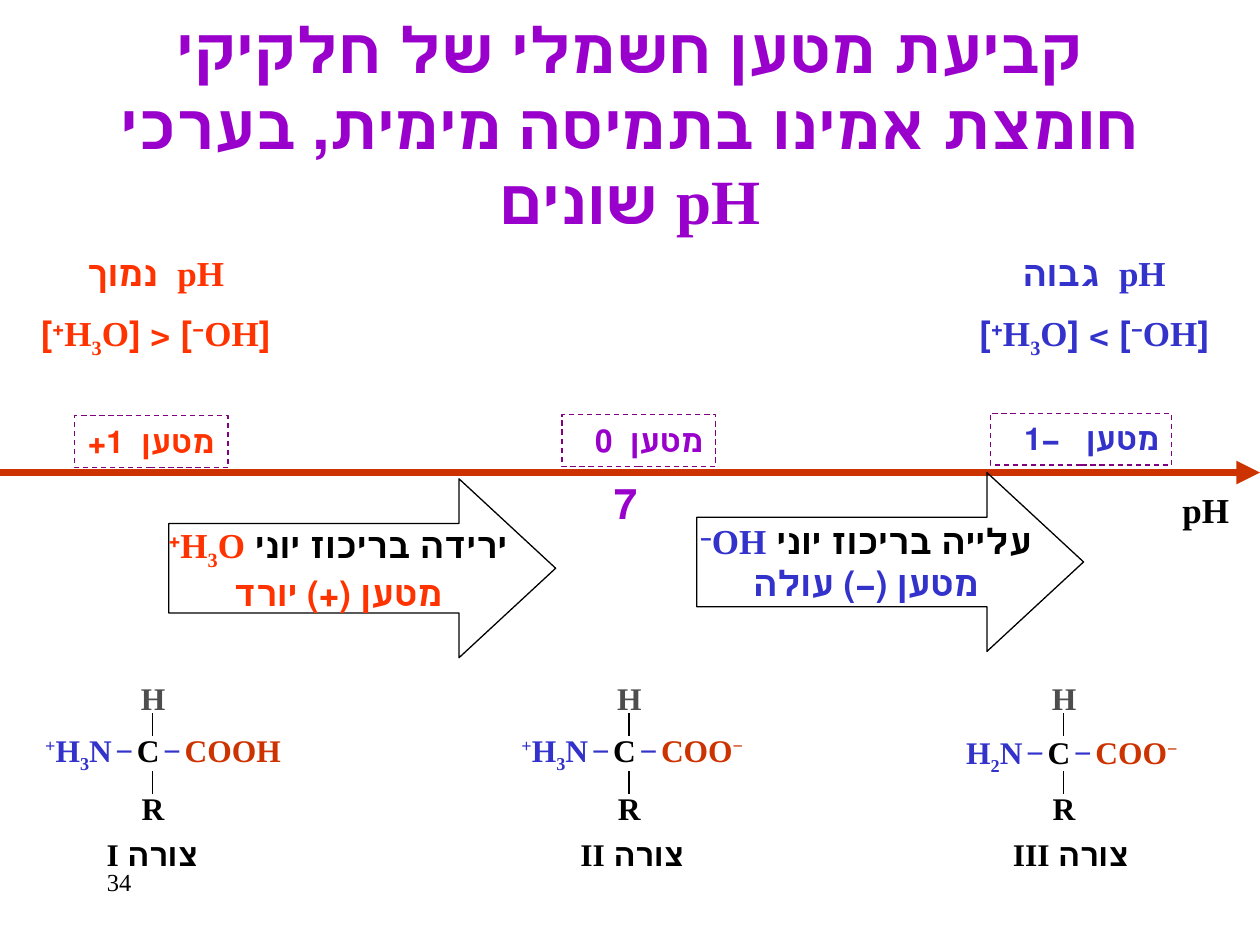
import collections
import pptx
import pptx.dml.color
import pptx.enum.dml
import pptx.enum.shapes
import pptx.enum.text
import pptx.oxml
import pptx.oxml.ns
import pptx.util
import lxml.etree

# The page is a grid of 100 columns by 75 rows of square cells.
COLUMNS, ROWS = 100, 75
CELL = pptx.util.Inches(0.1)
FONT = "Times New Roman"
COLORS = {
    "purple": "9900CC", "blue": "3333CC", "red": "FF3300", "rust": "CC3300",
    "frame": "800080", "grey": "4D4D4D", "black": "000000",
}
BASELINES = {"^": "30000", "_": "-25000"}
ALIGN = pptx.enum.text.PP_ALIGN
SHAPES = pptx.enum.shapes.MSO_SHAPE

Box = collections.namedtuple("Box", "left top width height")
Span = collections.namedtuple("Span", "text color size", defaults=["black", 18])


def cells(*counts):
    return [round(count * CELL) for count in counts]


def rgb(name):
    return pptx.dml.color.RGBColor.from_string(COLORS[name])


def add_child(parent, tag, **attributes):
    return lxml.etree.SubElement(parent, pptx.oxml.ns.qn(tag), attributes)


def split_scripts(text):
    """Yield (piece, mark); ^ raises and _ lowers the one character after it."""
    piece, mark = "", None
    for char in text:
        if char in BASELINES:
            if piece:
                yield piece, None
            piece, mark = "", char
        elif mark:
            yield char, mark
            mark = None
        else:
            piece += char
    if piece:
        yield piece, None


def add_span(para, span):
    for text, mark in split_scripts(span.text):
        run = para.add_run()
        run.text = text
        run.font.name = FONT
        run.font.size = pptx.util.Pt(span.size)
        run.font.bold = True
        run.font.color.rgb = rgb(span.color)
        if mark:
            run._r.get_or_add_rPr().set("baseline", BASELINES[mark])


def fill_text(shape, lines, align=ALIGN.CENTER, rtl=True, spaced=True, grow=True):
    """Write lines, each a list of spans, into the shape."""
    frame = shape.text_frame
    frame.word_wrap = True
    if grow:
        frame.auto_size = pptx.enum.text.MSO_AUTO_SIZE.SHAPE_TO_FIT_TEXT
    for index, spans in enumerate(lines):
        para = frame.paragraphs[0] if index == 0 else frame.add_paragraph()
        para.alignment = align
        properties = para._p.get_or_add_pPr()
        if rtl:
            properties.set("rtl", "1")
        if spaced:
            add_child(add_child(properties, "a:spcBef"), "a:spcPct", val="50000")
        for span in spans:
            add_span(para, span)
    return frame


def add_text(shapes, box, *lines, **options):
    return fill_text(shapes.add_textbox(*cells(*box)), lines, **options)


def add_outline(shapes, kind, box, color):
    shape = shapes.add_shape(kind, *cells(*box))
    shape.shadow.inherit = False
    shape.fill.background()
    shape.line.color.rgb = rgb(color)
    shape.line.width = pptx.util.Pt(0.75)
    return shape


def add_line(shapes, start, end, color, width):
    line = shapes.add_connector(
        pptx.enum.shapes.MSO_CONNECTOR.STRAIGHT, *cells(*start, *end))
    line.line.color.rgb = rgb(color)
    line.line.width = pptx.util.Pt(width)
    add_child(line._element.spPr, "a:effectLst")
    return line


def add_title(shapes, box):
    text = "קביעת מטען חשמלי של חלקיקי חומצת אמינו בתמיסה מימית, בערכי pH שונים"
    frame = add_text(shapes, box, [Span(text, "purple", 36)],
                     spaced=False, grow=False)
    frame.vertical_anchor = pptx.enum.text.MSO_ANCHOR.MIDDLE


def add_page_number(shapes, box):
    frame = add_text(shapes, box, [Span("34", "black", 14)],
                     align=ALIGN.LEFT, rtl=False, spaced=False, grow=False)
    frame.paragraphs[0].runs[0].font.bold = False


def add_condition(shapes, box, heading, sign, color):
    add_text(shapes, box, [Span(heading, color, 20)],
             [Span(f"[OH^−] {sign} [H_3O^+]", color, 20)])


def add_charge(shapes, box, text, color, align):
    frame = add_outline(shapes, SHAPES.RECTANGLE, box, "frame")
    frame.line.dash_style = pptx.enum.dml.MSO_LINE.DASH
    fill_text(frame, [[Span(text, color)]], align=align)
    frame.text_frame.vertical_anchor = pptx.enum.text.MSO_ANCHOR.TOP


def add_axis(shapes, box):
    group = shapes.add_group_shape().shapes
    add_text(group, Box(box.left + 47.3, box.top - 0.1, 4.7, 5),
             [Span("7", "purple", 24)])
    axis = add_line(group, (box.left, box.top),
                    (box.left + box.width, box.top), "rust", 4.5)
    add_child(axis.line._get_or_add_ln(), "a:tailEnd", type="triangle")
    add_text(group, Box(box.left + box.width - 8.6, box.top + 0.8, 8.6, 4.3),
             [Span("pH", "black", 20)])


def add_trend(shapes, box, cause, ion, effect, color):
    arrow = add_outline(shapes, SHAPES.RIGHT_ARROW, box, "black")
    arrow.adjustments[0], arrow.adjustments[1] = 0.5, 0.54
    frame = fill_text(
        arrow, [[Span(cause, "black", 20), Span(ion, color, 20)],
                [Span(effect, color, 20)]], spaced=False, grow=False)
    frame.word_wrap = False
    frame.vertical_anchor = pptx.enum.text.MSO_ANCHOR.MIDDLE


def add_molecule(shapes, box, center, label_left, amine, acid, label):
    """Place the formula in the box, with its bonds on the column center."""
    group = shapes.add_group_shape().shapes
    formula = [
        Span(amine, "blue"), Span(" ", "blue", 8), Span("−", "blue"),
        Span(" ", "black", 8), Span("C"), Span(" ", "blue", 8),
        Span("−", "blue"), Span(" ", "black", 8), Span(acid, "rust"),
    ]
    add_text(group, box, formula, align=ALIGN.LEFT, rtl=False)
    for text, color, top in (("H", "grey", 53.4), ("R", "black", 62.1)):
        add_text(group, Box(center - 3.9, top, 7.9, 4), [Span(text, color)],
                 rtl=False)
    for top in (56.6, 61.2):
        add_line(group, (center, top + 1.8), (center, top), "black", 1)
    add_text(group, Box(label_left, 65.8, 16.2, 4), [Span(label)])


def main():
    deck = pptx.Presentation()
    deck.slide_width, deck.slide_height = cells(COLUMNS, ROWS)
    shapes = deck.slides.add_slide(deck.slide_layouts[6]).shapes

    add_title(shapes, Box(7.5, 3.6, 85, 12.5))
    add_page_number(shapes, Box(7.5, 68.3, 20.8, 5))
    add_condition(shapes, Box(75.6, 19.5, 22.5, 9.3), "pH  גבוה", ">", "blue")
    add_condition(shapes, Box(1.9, 19.5, 20.9, 9.3), "pH  נמוך", "<", "red")

    for box, text, color, align in (
        (Box(5.9, 33, 12.2, 4.1), "מטען  1+", "red", ALIGN.CENTER),
        (Box(44.6, 32.9, 12.2, 4.1), "מטען  0", "purple", ALIGN.RIGHT),
        (Box(78.6, 32.8, 14.4, 4.1), "מטען   −1", "blue", ALIGN.RIGHT),
    ):
        add_charge(shapes, box, text, color, align)

    add_trend(shapes, Box(13.4, 38, 30.7, 14.2), "ירידה בריכוז יוני ",
              "H_3O^+", "מטען (+) יורד", "red")
    add_axis(shapes, Box(0, 37.5, COLUMNS, 0))
    add_trend(shapes, Box(55.3, 37.5, 30.7, 14.2), "עלייה בריכוז יוני ",
              "OH^−", "מטען (−) עולה", "blue")

    for left, top, center, label_left, amine, acid, label in (
        (2.6, 57.5, 12.1, 4, "^+H_3N", "COOH", "צורה I"),
        (40.4, 57.5, 49.9, 42.1, "^+H_3N", "COO^−", "צורה II"),
        (75.7, 57.7, 84.4, 76.9, "H_2N", "COO^−", "צורה III"),
    ):
        add_molecule(shapes, Box(left, top, 24.3, 4), center, label_left,
                     amine, acid, label)
    deck.save("out.pptx")


if __name__ == "__main__":
    main()
